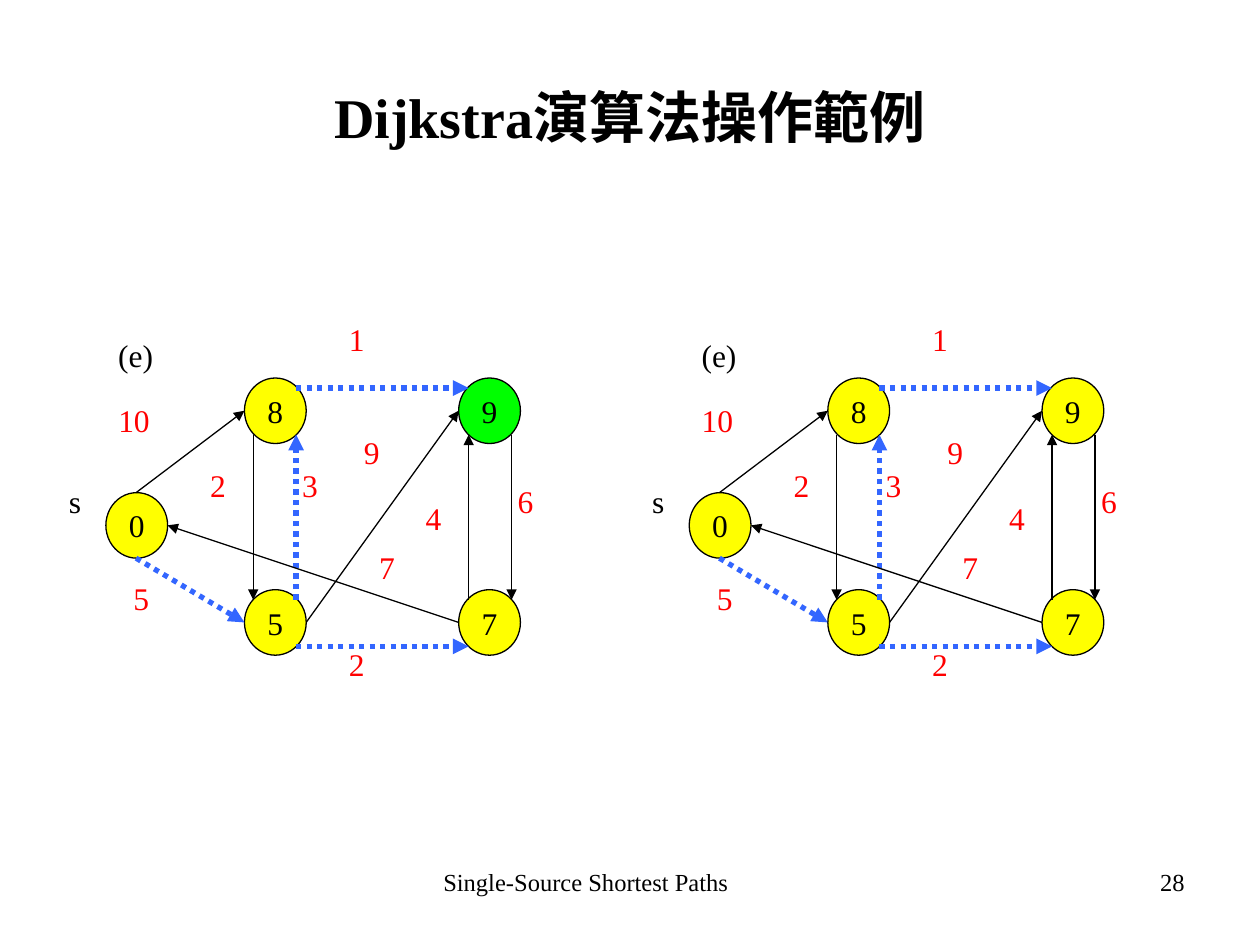
from pptx import Presentation
from pptx import util as u
from pptx.dml.color import RGBColor
from pptx.enum import dml, shapes, text
from pptx.oxml.ns import qn
from lxml import etree

BLACK = RGBColor(0x00, 0x00, 0x00)
RED = RGBColor(0xFF, 0x00, 0x00)
BLUE = RGBColor(0x33, 0x66, 0xFF)
YELLOW = RGBColor(0xFF, 0xFF, 0x00)
GREEN = RGBColor(0x00, 0xFF, 0x00)
FONT = "Times New Roman"
LEFT, CENTER, RIGHT = text.PP_ALIGN.LEFT, text.PP_ALIGN.CENTER, text.PP_ALIGN.RIGHT

NODE_W, NODE_H = 0.49, 0.52
NODES = [("0", 0.84, 3.91), ("8", 1.94, 3), ("9", 3.64, 3),
         ("5", 1.94, 4.68), ("7", 3.64, 4.68)]
EDGES = [
    (1.08, 3.91, 1.94, 3.26, False),
    (1.08, 4.43, 1.94, 4.94, True),
    (2.35, 3.08, 3.72, 3.08, True),
    (2.35, 5.13, 3.72, 5.13, True),
    (2.01, 3.45, 2.01, 4.76, False),
    (2.35, 4.76, 2.35, 3.45, True),
    (4.06, 3.45, 4.06, 4.76, False),
    (3.72, 4.76, 3.72, 3.45, False),
    (3.64, 4.94, 1.33, 4.17, False),
    (2.43, 4.94, 3.64, 3.26, False),
]
WEIGHTS = [("10", 0.84, 3.13), ("5", 0.96, 4.55), ("1", 2.67, 2.49),
           ("2", 1.57, 3.65), ("3", 2.3, 3.65), ("2", 2.67, 5.07),
           ("7", 2.91, 4.3), ("9", 2.79, 3.39), ("4", 3.28, 3.91),
           ("6", 4.01, 3.78)]


def write(sp, words, size, color=BLACK, align=LEFT, bold=False):
    tf = sp.text_frame
    tf.text = words
    p = tf.paragraphs[0]
    p.alignment = align
    for r in p.runs:
        r.font.name = FONT
        r.font.size = u.Pt(size)
        r.font.bold = bold
        r.font.color.rgb = color


def label(parent, words, x, y, w, h=0.4, size=18, color=BLACK, align=LEFT):
    sp = parent.shapes.add_textbox(u.Inches(x), u.Inches(y), u.Inches(w), u.Inches(h))
    sp.text_frame.word_wrap = True
    write(sp, words, size, color, align)


prs = Presentation()
prs.slide_width, prs.slide_height = u.Inches(10), u.Inches(7.5)
s = prs.slides.add_slide(prs.slide_layouts[5])

title = s.shapes.title
title.left, title.top = u.Inches(0.5), u.Inches(0.3)
title.width, title.height = u.Inches(9), u.Inches(1.25)
title.text_frame.vertical_anchor = text.MSO_ANCHOR.MIDDLE
write(title, "Dijkstra演算法操作範例", 32, align=CENTER, bold=True)

label(s, "Single-Source Shortest Paths", 3.42, 6.83, 3.17, 0.52, 14)
label(s, "28", 7.17, 6.83, 2.33, 0.52, 14, align=RIGHT)

for dx, open_node in [(0, "9"), (4.63, None)]:
    graph = s.shapes.add_group_shape()

    for name, x, y in NODES:
        sp = graph.shapes.add_shape(shapes.MSO_SHAPE.OVAL, u.Inches(x + dx), u.Inches(y),
                                    u.Inches(NODE_W), u.Inches(NODE_H))
        sp.shadow.inherit = False
        sp.fill.solid()
        sp.fill.fore_color.rgb = GREEN if name == open_node else YELLOW
        sp.line.color.rgb = BLACK
        sp.line.width = u.Pt(0.75)
        sp.text_frame.word_wrap = False
        sp.text_frame.vertical_anchor = text.MSO_ANCHOR.MIDDLE
        write(sp, name, 18, align=CENTER)

    for x1, y1, x2, y2, on_path in EDGES:
        ln = graph.shapes.add_connector(shapes.MSO_CONNECTOR.STRAIGHT,
                                        u.Inches(x1 + dx), u.Inches(y1),
                                        u.Inches(x2 + dx), u.Inches(y2))
        ln.line.color.rgb = BLUE if on_path else BLACK
        ln.line.width = u.Pt(3 if on_path else 0.75)
        if on_path:
            ln.line.dash_style = dml.MSO_LINE.ROUND_DOT
        sppr = ln._element.spPr
        etree.SubElement(sppr.find(qn("a:ln")), qn("a:tailEnd"), type="triangle")
        etree.SubElement(sppr, qn("a:effectLst"))

    for weight, x, y in WEIGHTS:
        label(graph, weight, x + dx, y, 0.85, color=RED)

    label(graph, "(e)", 0.84 + dx, 2.62, 1.1)
    label(graph, "s", 0.35 + dx, 3.78, 0.49, align=CENTER)

prs.save("out.pptx")
